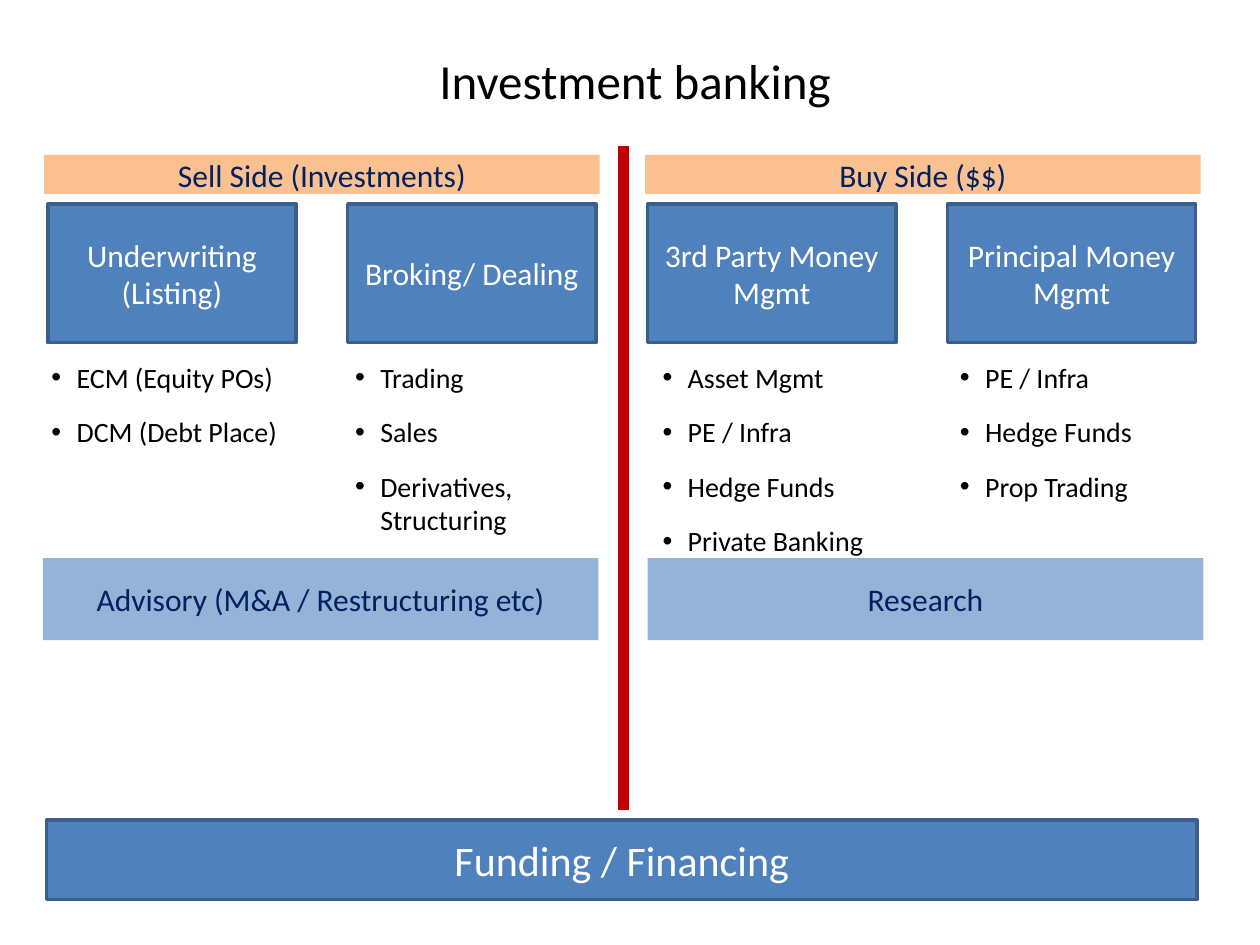
from lxml import etree
from pptx import Presentation
from pptx import util as u
from pptx.dml.color import RGBColor
from pptx.enum import shapes, text
from pptx.oxml.ns import qn

FONT = "Calibri"
BLUE, EDGE, LIGHT_BLUE, ORANGE = "4F81BD", "3A5F8C", "95B3D7", "FAC090"
NAVY, RED, WHITE, BLACK = "002060", "C00000", "FFFFFF", "000000"
LEFT, COLUMN_STEP, COLUMN_WIDTH = 0.38, 2.38, 1.97
SIDE_WIDTH = 4.41

COLUMNS = [
    ("Underwriting (Listing)", 0.31, 1.25, ["ECM (Equity POs)", "DCM (Debt Place)"]),
    ("Broking/ Dealing", 2.72, 1.95, ["Trading", "Sales", "Derivatives, Structuring"]),
    ("3rd Party Money Mgmt", 5.16, 1.68,
     ["Asset Mgmt", "PE / Infra", "Hedge Funds", "Private Banking"]),
    ("Principal Money Mgmt", 7.52, 1.25, ["PE / Infra", "Hedge Funds", "Prop Trading"]),
]
SIDES = [
    ("Sell Side (Investments)", 0.35, "Advisory (M&A / Restructuring etc)", 0.34),
    ("Buy Side ($$)", 5.12, "Research", 5.14),
]


def color(value):
    """Turn a hex string into a colour."""
    return RGBColor.from_string(value)


def inches(*lengths):
    """Convert several lengths to inches."""
    return [u.Inches(length) for length in lengths]


def add_bullet(paragraph):
    """Give a paragraph a hanging round bullet."""
    properties = paragraph._p.get_or_add_pPr()
    properties.set("marL", str(u.Inches(0.2)))
    properties.set("indent", str(u.Inches(-0.2)))
    etree.SubElement(properties, qn("a:buFont")).set("typeface", "Arial")
    etree.SubElement(properties, qn("a:buChar")).set("char", "•")


def write(frame, lines, size=18, ink=WHITE, align=text.PP_ALIGN.CENTER,
          anchor=text.MSO_ANCHOR.MIDDLE, bullets=False):
    """Fill a text frame with one formatted paragraph per line."""
    frame.word_wrap = True
    frame.vertical_anchor = anchor
    for index, line in enumerate(lines):
        paragraph = frame.add_paragraph() if index else frame.paragraphs[0]
        paragraph.alignment = align
        if bullets:
            paragraph.space_before = u.Pt(12)
            add_bullet(paragraph)
        run = paragraph.add_run()
        run.text = line
        run.font.name, run.font.size = FONT, u.Pt(size)
        run.font.color.rgb = color(ink)


def add_title(slide, title):
    """Place and format the title placeholder."""
    shape = slide.shapes.title
    shape.left, shape.top, shape.width, shape.height = inches(1.77, 0.36, 6.54, 0.55)
    write(shape.text_frame, [title], size=28, ink=BLACK)


def add_box(slide, label, box, fill, edge=None, **text_format):
    """Draw a labelled rectangle, with an outline if asked."""
    shape = slide.shapes.add_shape(shapes.MSO_SHAPE.RECTANGLE, *inches(*box))
    shape.shadow.inherit = False
    shape.fill.solid()
    shape.fill.fore_color.rgb = color(fill)
    if edge:
        shape.line.color.rgb = color(edge)
        shape.line.width = u.Pt(2)
    else:
        shape.line.fill.background()
    write(shape.text_frame, [label], **text_format)


def add_list(slide, items, box):
    """Add a bulleted list in a text box."""
    frame = slide.shapes.add_textbox(*inches(*box)).text_frame
    write(frame, items, size=16, ink=BLACK, align=text.PP_ALIGN.LEFT,
          anchor=text.MSO_ANCHOR.TOP, bullets=True)
    frame.auto_size = text.MSO_AUTO_SIZE.SHAPE_TO_FIT_TEXT


def add_divider(slide, x, top, bottom):
    """Draw the thick vertical line between the two sides."""
    line = slide.shapes.add_connector(
        shapes.MSO_CONNECTOR.STRAIGHT, *inches(x, top, x, bottom))
    line.line.color.rgb = color(RED)
    line.line.width = u.Pt(6)
    etree.SubElement(line._element.spPr, qn("a:effectLst"))


def main():
    """Build the investment banking slide."""
    presentation = Presentation()
    presentation.slide_width, presentation.slide_height = inches(10, 7.5)
    slide = presentation.slides.add_slide(presentation.slide_layouts[5])
    add_title(slide, "Investment banking")
    for index, (heading, list_left, list_height, items) in enumerate(COLUMNS):
        left = LEFT + index * COLUMN_STEP
        add_box(slide, heading, (left, 1.62, COLUMN_WIDTH, 1.1), BLUE, EDGE)
        add_list(slide, items, (list_left, 2.81, 2.05, list_height))
    for side, side_left, service, service_left in SIDES:
        add_box(slide, side, (side_left, 1.23, SIDE_WIDTH, 0.31), ORANGE, ink=NAVY)
        add_box(slide, service, (service_left, 4.43, SIDE_WIDTH, 0.65), LIGHT_BLUE, ink=NAVY)
    add_box(slide, "Funding / Financing", (0.37, 6.51, 9.13, 0.63), BLUE, EDGE, size=24)
    add_divider(slide, 4.95, 1.16, 6.43)
    presentation.save("out.pptx")


if __name__ == "__main__":
    main()
